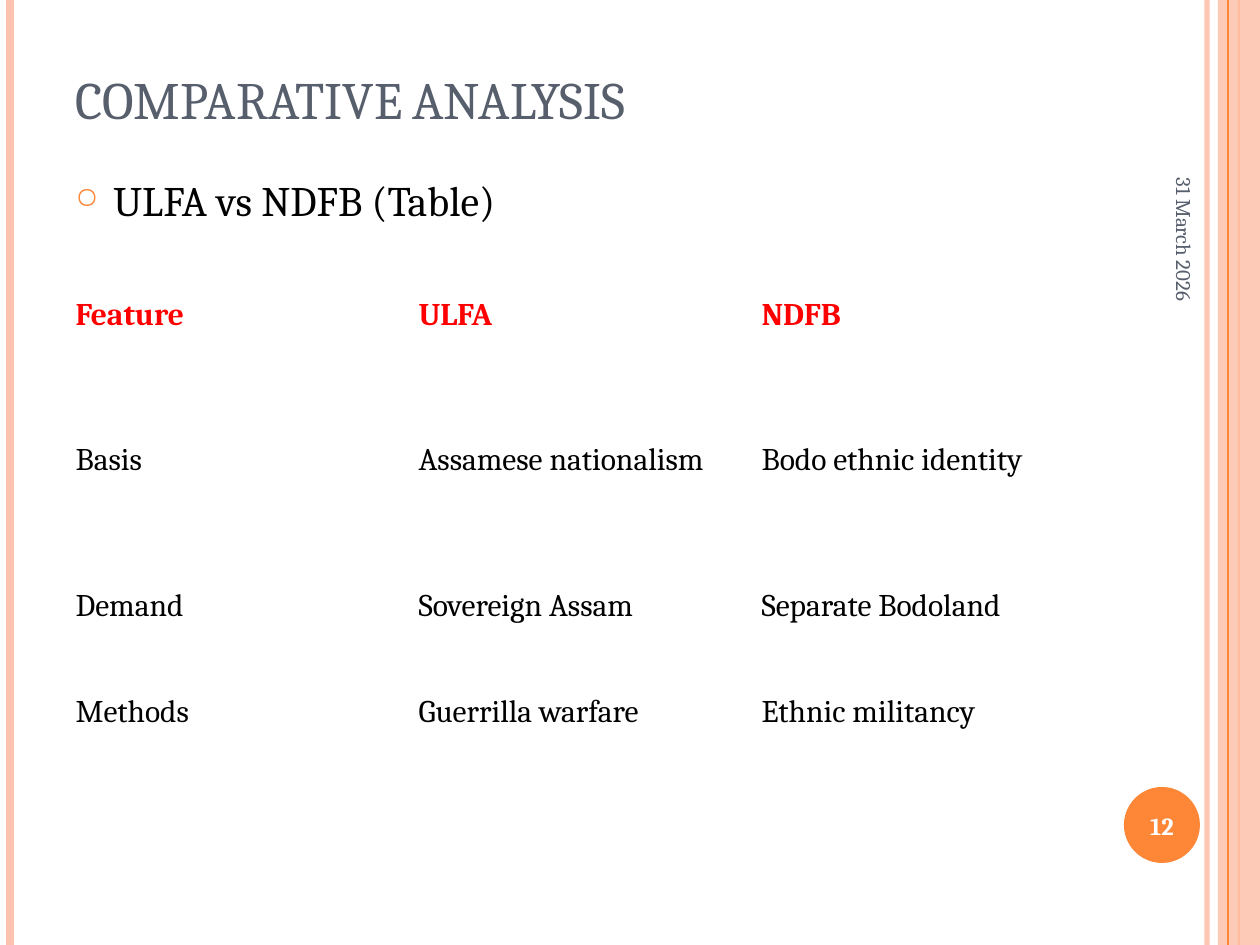
from lxml import etree
from pptx import Presentation
from pptx.dml.color import RGBColor
from pptx.enum.shapes import MSO_CONNECTOR, MSO_SHAPE
from pptx.enum.text import MSO_ANCHOR, MSO_AUTO_SIZE, PP_ALIGN
from pptx.oxml.ns import qn
from pptx.util import Emu, Pt

STRAIGHT = MSO_CONNECTOR.STRAIGHT
RECT, OVAL = MSO_SHAPE.RECTANGLE, MSO_SHAPE.OVAL
TOP, MIDDLE, BOTTOM = MSO_ANCHOR.TOP, MSO_ANCHOR.MIDDLE, MSO_ANCHOR.BOTTOM
LEFT, CENTER, RIGHT = PP_ALIGN.LEFT, PP_ALIGN.CENTER, PP_ALIGN.RIGHT
NO_FIT = MSO_AUTO_SIZE.NONE

WIDTH, HEIGHT = 1260, 945
ORANGE, PEACH, SLATE = "FE8637", "FEC3AE", "575F6D"
BLACK, WHITE, RED = "000000", "FFFFFF", "FF0000"
ROWS = [
    ("Feature", "ULFA", "NDFB"),
    ("Basis", "Assamese nationalism", "Bodo ethnic identity"),
    ("Demand", "Sovereign Assam", "Separate Bodoland"),
    ("Methods", "Guerrilla warfare", "Ethnic militancy"),
]


def px(n):
    return Emu(round(n * 914400 / 126))


def rgb(value):
    return RGBColor.from_string(value)


def set_alpha(fill_parent, percent):
    color = fill_parent.find(".//" + qn("a:srgbClr"))
    etree.SubElement(color, qn("a:alpha")).set("val", str(percent * 1000))


class Deck:
    """Holds the font and the current slide and adds elements to it."""

    def __init__(self, font):
        self.font = font
        self.prs = Presentation()
        self.prs.slide_width, self.prs.slide_height = px(WIDTH), px(HEIGHT)
        self.s = self.prs.slides.add_slide(self.prs.slide_layouts[5])

    def run(self, p, text, size, color, bold=False):
        r = p.add_run()
        r.text = text
        r.font.name, r.font.size, r.font.bold = self.font, Pt(size), bold
        r.font.color.rgb = rgb(color)
        return r

    def frame(self, sp, anchor, align):
        tf = sp.text_frame
        tf.word_wrap, tf.auto_size = True, NO_FIT
        tf.vertical_anchor = anchor
        p = tf.paragraphs[0]
        p.alignment = align
        return p

    def title(self, box, text, size, color):
        sp = self.s.shapes.title
        sp.left, sp.top, sp.width, sp.height = map(px, box)
        r = self.run(self.frame(sp, BOTTOM, LEFT), text, size, color)
        r.font._element.set("cap", "small")

    def text(self, box, text, size, color, anchor=MIDDLE, align=LEFT,
             bold=False, rotation=0):
        sp = self.s.shapes.add_textbox(*map(px, box))
        sp.rotation = rotation
        p = self.frame(sp, anchor, align)
        self.run(p, text, size, color, bold)
        return p

    def bullet(self, box, text, size, color, mark, mark_color):
        p = self.text(box, text, size, color, TOP)
        pPr = p._p.get_or_add_pPr()
        pPr.set("marL", str(px(38)))
        pPr.set("indent", str(-px(38)))
        clr = etree.SubElement(pPr, qn("a:buClr"))
        etree.SubElement(clr, qn("a:srgbClr")).set("val", mark_color)
        etree.SubElement(pPr, qn("a:buSzPct")).set("val", "70000")
        etree.SubElement(pPr, qn("a:buChar")).set("char", mark)

    def shape(self, kind, box, color, alpha=100):
        sp = self.s.shapes.add_shape(kind, *map(px, box))
        sp.shadow.inherit = False
        sp.fill.solid()
        sp.fill.fore_color.rgb = rgb(color)
        sp.line.fill.background()
        if alpha < 100:
            set_alpha(sp._element.spPr, alpha)

    def stripe(self, x, color, width, alpha=100):
        ln = self.s.shapes.add_connector(STRAIGHT, px(x), 0, px(x), px(HEIGHT))
        ln.line.color.rgb = rgb(color)
        ln.line.width = Pt(width)
        spPr = ln._element.spPr
        if alpha < 100:
            set_alpha(spPr, alpha)
        etree.SubElement(spPr, qn("a:effectLst"))

    def table(self, box, rows, heights, size, head_color, color):
        shape = self.s.shapes.add_table(len(rows), len(rows[0]), *map(px, box))
        tbl = shape.table
        tbl.first_row = tbl.horz_banding = False
        for row, height in zip(tbl.rows, heights):
            row.height = px(height)
        for i, row in enumerate(rows):
            for j, text in enumerate(row):
                cell = tbl.cell(i, j)
                cell.fill.background()
                cell.vertical_anchor = MIDDLE
                self.run(cell.text_frame.paragraphs[0], text, size,
                         color if i else head_color, bold=i == 0)


def main():
    deck = Deck("Cambria")
    deck.stripe(1207, PEACH, 3, alpha=93)
    deck.stripe(10, PEACH, 4.5)
    deck.stripe(1239, ORANGE, 1.5)
    deck.shape(RECT, (1218, 0, 42, HEIGHT), PEACH, alpha=87)
    deck.stripe(1228, ORANGE, 0.75)
    deck.shape(OVAL, (1124, 787, 76, 76), ORANGE)
    deck.title((63, 38, 1029, 98), "COMPARATIVE ANALYSIS", 30, SLATE)
    deck.bullet((63, 168, 1029, 724), "ULFA vs NDFB (Table)", 24, BLACK,
                "○", ORANGE)
    deck.text((1046, 149, 277, 53), "31 March 2026", 12, SLATE,
              align=RIGHT, rotation=90)
    deck.text((1120, 790, 84, 72), "12", 14, WHITE, align=CENTER, bold=True)
    deck.table((63, 262, 1029, 504), ROWS, (106, 185, 106, 106), 18, RED, BLACK)
    deck.prs.save("out.pptx")


if __name__ == "__main__":
    main()
